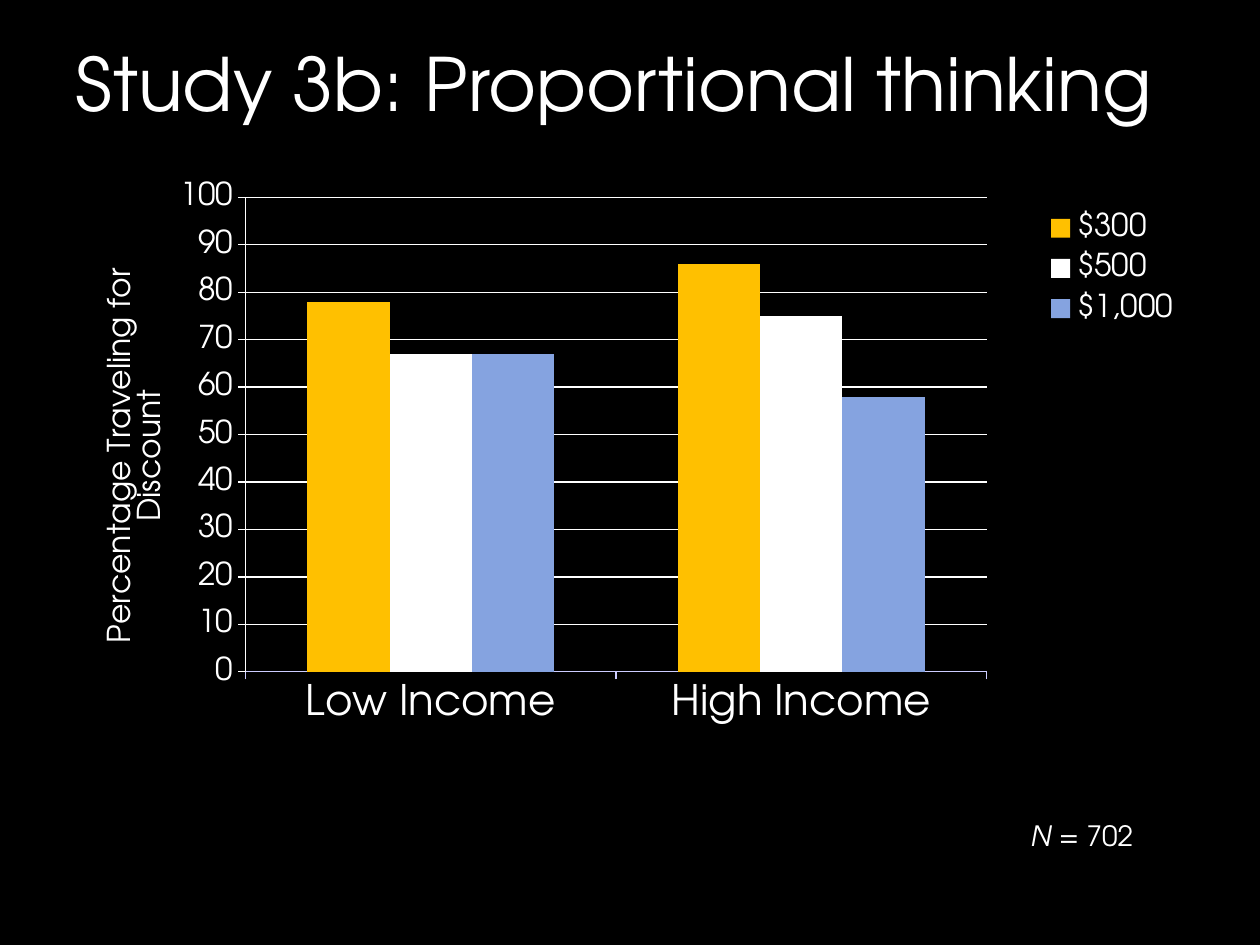
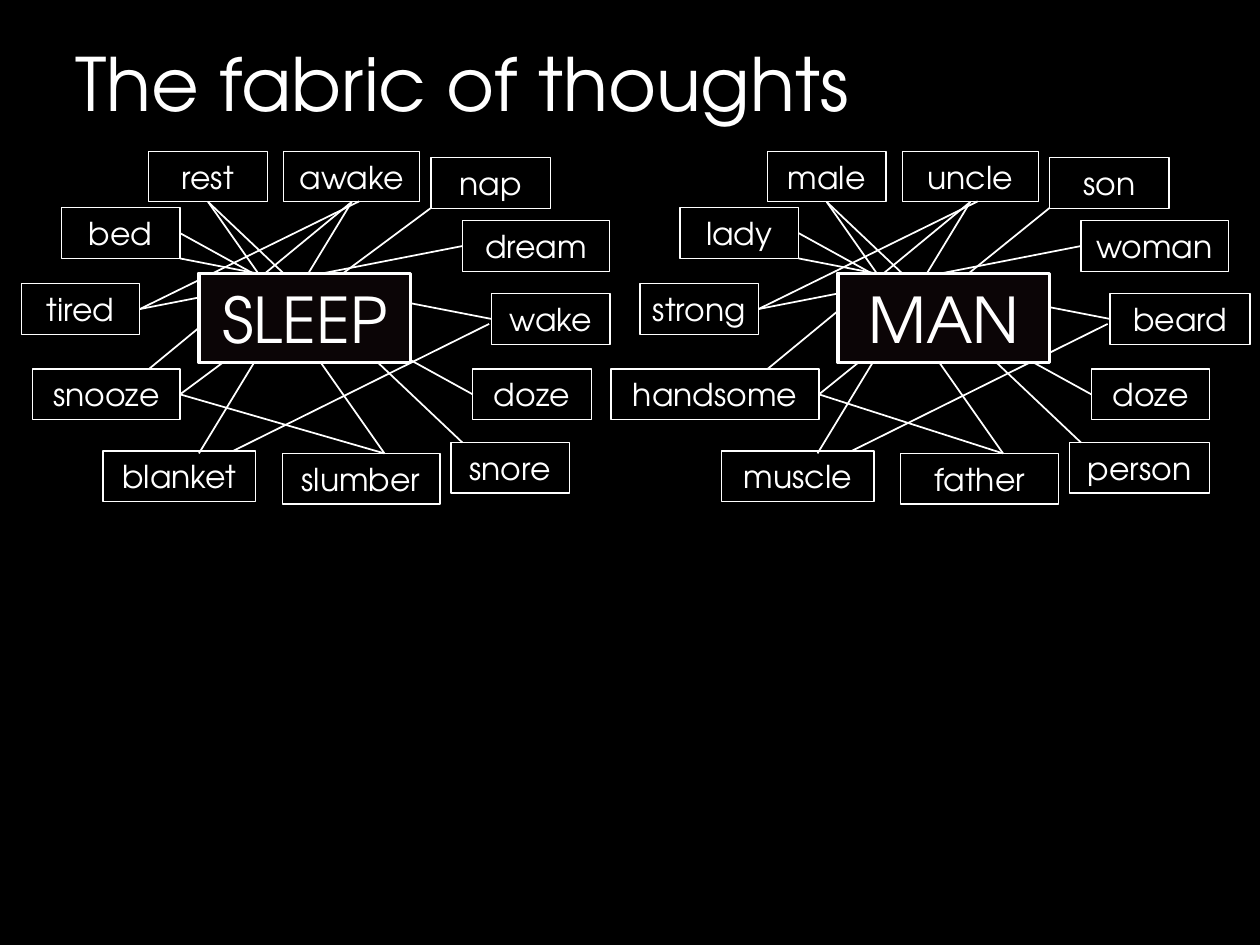
from dataclasses import dataclass, field
from typing import Any, NamedTuple, Union

from pptx import Presentation
from pptx.chart.data import CategoryChartData
from pptx.dml.color import RGBColor
from pptx.enum.chart import XL_CHART_TYPE, XL_LEGEND_POSITION, XL_TICK_MARK
from pptx.enum.shapes import MSO_CONNECTOR, MSO_SHAPE
from pptx.enum.text import MSO_ANCHOR, MSO_AUTO_SIZE, PP_ALIGN
from pptx.oxml import parse_xml
from pptx.oxml.ns import nsdecls, qn
from pptx.util import Cm, Pt

COLORS = {
    "black": "000000",
    "white": "FFFFFF",
    "hub": "0B0506",
    "pale": "CCCCFF",
    "gold": "FFC000",
    "blue": "85A3E0",
}
FACE = "TeX Gyre Adventor"
TITLE_BOX = (1.27, 0.64, 22.86, 3.18)
CHART_BOX = (1.27, 3.38, 22.99, 11.96)
COUNT_BOX = (19.69, 16.31, 4.24, 1.07)
BOX_HIGH = 1.02
BOTTOM, LEFT, RIGHT = 2, 1, 3

GROUPS = ["Low Income", "High Income"]
SERIES = [
    ("$300", (78, 86), "gold"),
    ("$500", (67, 75), "white"),
    ("$1,000", (67, 58), "blue"),
]


class Box(NamedTuple):
    left: float
    top: float
    wide: float
    high: float = BOX_HIGH


class Port(NamedTuple):
    slot: str
    side: int


class Point(NamedTuple):
    x: float
    y: float


End = Union[Port, Point]


class Link(NamedTuple):
    start: End
    stop: End


@dataclass(frozen=True)
class Web:
    hub: str
    words: dict[str, str]
    shift: float = 0
    hub_box: Box = Box(4.01, 5.51, 4.27, 1.8)
    moved: dict[str, Box] = field(default_factory=dict)


SLOTS = {
    "bed": Box(1.24, 4.19, 2.39),
    "rest": Box(3, 3.05, 2.39),
    "tired": Box(0.43, 5.72, 2.39),
    "dream": Box(9.32, 4.45, 2.97),
    "wake": Box(9.91, 5.92, 2.39),
    "snooze": Box(0.66, 7.44, 2.97),
    "blanket": Box(2.08, 9.09, 3.07),
    "doze": Box(9.53, 7.44, 2.39),
    "slumber": Box(5.69, 9.14, 3.18),
    "awake": Box(5.72, 3.05, 2.74),
    "snore": Box(9.09, 8.92, 2.39),
    "nap": Box(8.69, 3.18, 2.41),
}
LINKS = [
    Link(Port("rest", BOTTOM), Point(9.32, 8.92)),
    Link(Point(8.69, 4.19), Port("snooze", RIGHT)),
    Link(Point(3.63, 5.21), Port("wake", LEFT)),
    Link(Port("rest", BOTTOM), Point(7.75, 9.14)),
    Link(Point(7.24, 4.06), Port("tired", RIGHT)),
    Link(Point(9.86, 6.53), Point(4.7, 9.09)),
    Link(Port("doze", LEFT), Port("bed", RIGHT)),
    Link(Port("dream", LEFT), Port("tired", RIGHT)),
    Link(Point(7.75, 9.14), Port("snooze", RIGHT)),
    Link(Port("awake", BOTTOM), Point(4.01, 9.14)),
    Link(Port("awake", BOTTOM), Point(3, 7.44)),
]
WEBS = [
    Web("SLEEP", {slot: slot for slot in SLOTS}),
    Web(
        "MAN",
        dict(zip(SLOTS, ["lady", "male", "strong", "woman", "beard", "handsome",
                         "muscle", "doze", "father", "uncle", "person", "son"])),
        shift=12.47,
        hub_box=Box(4.42, 5.51, 4.27, 1.8),
        moved={
            "wake": Box(9.91, 5.92, 2.82),
            "snooze": Box(-0.15, 7.44, 4.19),
            "snore": Box(9.09, 8.92, 2.82),
        },
    ),
]


def tint(name: str) -> RGBColor:
    return RGBColor.from_string(COLORS[name])


def put(target: Any, **values: Any) -> None:
    for name, value in values.items():
        setattr(target, name, value)


def style(font: Any, size: float, color: str = "white", **more: Any) -> None:
    put(font, name=FACE, size=Pt(size), bold=False, **more)
    font.color.rgb = tint(color)


def stroke(line: Any, width: float, color: str = "white") -> None:
    line.color.rgb = tint(color)
    line.width = Pt(width)


def lengths(*values: float) -> list[Cm]:
    return [Cm(value) for value in values]


def add_page(deck: Any, text: str) -> Any:
    page = deck.slides.add_slide(deck.slide_layouts[5])
    title = page.shapes.title
    put(title, **dict(zip(("left", "top", "width", "height"), lengths(*TITLE_BOX))))
    frame = title.text_frame
    put(frame, text=text, auto_size=MSO_AUTO_SIZE.NONE, vertical_anchor=MSO_ANCHOR.TOP)
    frame.paragraphs[0].alignment = PP_ALIGN.LEFT
    style(frame.paragraphs[0].runs[0].font, 42)
    return page


def place(node: Any, **spots: float) -> None:
    for old in node.findall(qn("c:layout")):
        node.remove(old)
    modes = '<c:xMode val="edge"/><c:yMode val="edge"/>'
    inner = '<c:layoutTarget val="inner"/>' if node.tag == qn("c:plotArea") else ""
    sizes = "".join(f'<c:{key} val="{value}"/>' for key, value in spots.items())
    layout = parse_xml(
        f'<c:layout {nsdecls("c")}><c:manualLayout>{inner}{modes}{sizes}'
        "</c:manualLayout></c:layout>"
    )
    cover = node.find(qn("c:overlay"))
    if cover is None:
        node.insert(0, layout)
    else:
        cover.addprevious(layout)


def add_bars(page: Any) -> None:
    data = CategoryChartData()
    data.categories = GROUPS
    for name, values, _ in SERIES:
        data.add_series(name, values)
    chart = page.shapes.add_chart(
        XL_CHART_TYPE.COLUMN_CLUSTERED, *lengths(*CHART_BOX), data
    ).chart
    put(chart, has_title=False, has_legend=True)
    style(chart.font, 10, "pale")

    plot = chart.plots[0]
    put(plot, gap_width=150, vary_by_categories=False)
    for bars, (_, _, color) in zip(plot.series, SERIES):
        bars.format.fill.solid()
        bars.format.fill.fore_color.rgb = tint(color)

    scale = chart.value_axis
    put(scale, minimum_scale=0, maximum_scale=100, major_unit=10,
        has_major_gridlines=True)
    for axis, size, color in ((chart.category_axis, 24, "pale"), (scale, 18, "white")):
        put(axis, major_tick_mark=XL_TICK_MARK.OUTSIDE, minor_tick_mark=XL_TICK_MARK.NONE)
        style(axis.tick_labels.font, size)
        stroke(axis.format.line, 0.75, color)
    stroke(scale.major_gridlines.format.line, 0.75)

    label = scale.axis_title
    frame = label.text_frame
    frame.text = "Percentage Traveling for Discount"
    style(frame.paragraphs[0].runs[0].font, 18)
    frame._txBody.bodyPr.set("rot", "-5400000")
    frame._txBody.bodyPr.set("vert", "horz")

    put(chart.legend, position=XL_LEGEND_POSITION.RIGHT, include_in_layout=False)
    style(chart.legend.font, 18)

    area = chart._chartSpace.chart.plotArea
    area.append(parse_xml(
        f'<c:spPr {nsdecls("c", "a")}><a:solidFill>'
        f'<a:srgbClr val="{COLORS["black"]}"/></a:solidFill></c:spPr>'
    ))
    place(area, x=0.16, y=0.05, w=0.65, h=0.8)
    place(label._element, x=0.03, y=0.16)
    place(chart.legend._element, x=0.85, y=0.06, w=0.14, h=0.22)


def add_count(page: Any) -> None:
    frame = page.shapes.add_textbox(*lengths(*COUNT_BOX)).text_frame
    put(frame, word_wrap=False, vertical_anchor=MSO_ANCHOR.MIDDLE)
    line = frame.paragraphs[0]
    line.alignment = PP_ALIGN.CENTER
    for text, slant in (("N", True), (" = 702", False)):
        run = line.add_run()
        run.text = text
        style(run.font, 16, italic=slant)


def add_word(page: Any, text: str, box: Box, shift: float, size: float = 18,
             width: float = 0.75, fill: str = "") -> Any:
    shape = page.shapes.add_shape(
        MSO_SHAPE.RECTANGLE, *lengths(box.left + shift, *box[1:])
    )
    shape.shadow.inherit = False
    if fill:
        shape.fill.solid()
        shape.fill.fore_color.rgb = tint(fill)
    else:
        shape.fill.background()
    stroke(shape.line, width)
    frame = shape.text_frame
    put(frame, text=text, word_wrap=False, vertical_anchor=MSO_ANCHOR.MIDDLE)
    frame.paragraphs[0].alignment = PP_ALIGN.CENTER
    style(frame.paragraphs[0].runs[0].font, size)
    return shape


def add_link(page: Any, link: Link, shapes: dict[str, Any], shift: float) -> None:
    spots = [
        value
        for end in link
        for value in ((end.x + shift, end.y) if isinstance(end, Point) else (0, 0))
    ]
    line = page.shapes.add_connector(MSO_CONNECTOR.STRAIGHT, *lengths(*spots))
    for end, join in zip(link, (line.begin_connect, line.end_connect)):
        if isinstance(end, Port):
            join(shapes[end.slot], end.side)
    stroke(line.line, 1)
    line._element.spPr.append(parse_xml(f'<a:effectLst {nsdecls("a")}/>'))


def add_web(page: Any, web: Web) -> None:
    boxes = {**SLOTS, **web.moved}
    shapes = {
        slot: add_word(page, web.words[slot], box, web.shift)
        for slot, box in boxes.items()
    }
    for link in LINKS:
        add_link(page, link, shapes, web.shift)
    add_word(page, web.hub, web.hub_box, web.shift, size=36, width=2, fill="hub")


def main() -> None:
    deck = Presentation()
    put(deck, slide_width=Cm(25.4), slide_height=Cm(19.05))
    back = deck.slide_master.background.fill
    back.solid()
    back.fore_color.rgb = tint("black")

    study = add_page(deck, "Study 3b: Proportional thinking")
    add_bars(study)
    add_count(study)

    fabric = add_page(deck, "The fabric of thoughts")
    for web in WEBS:
        add_web(fabric, web)

    deck.save("out.pptx")


if __name__ == "__main__":
    main()
